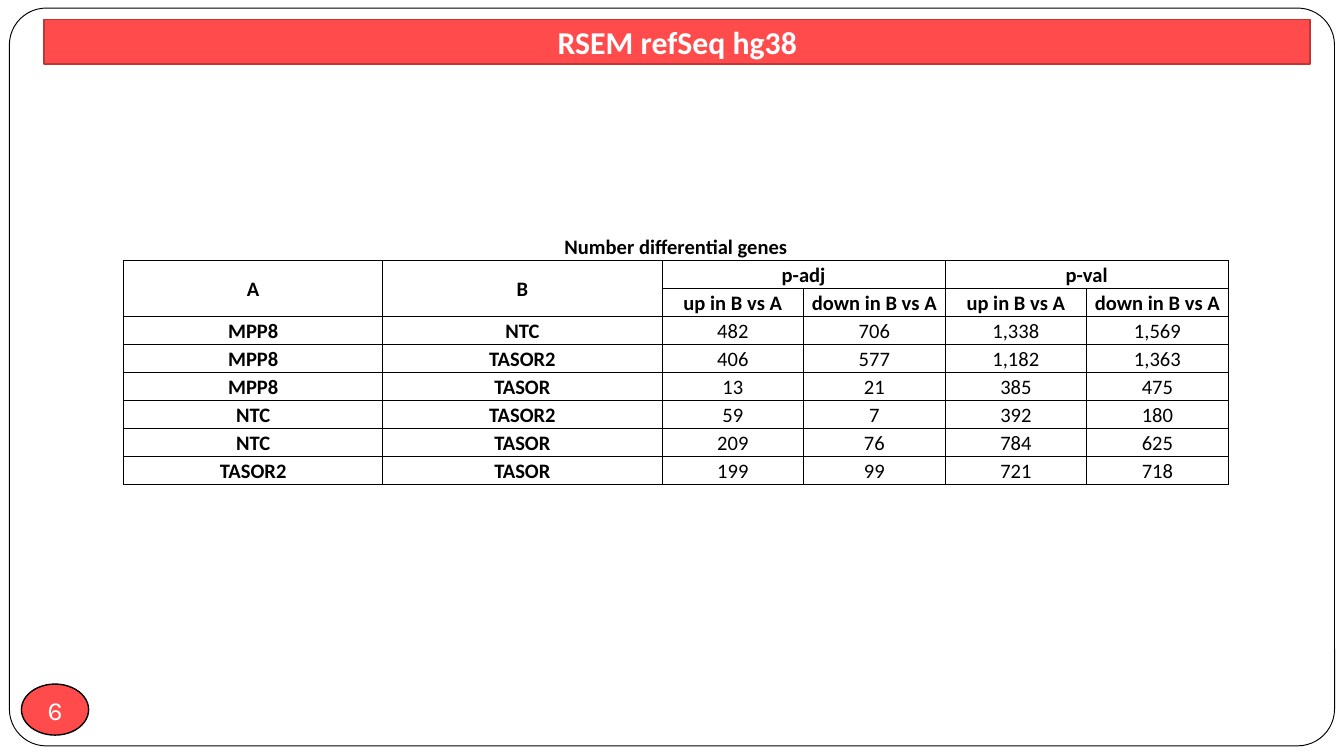
import lxml.etree
import pptx
import pptx.dml.color
import pptx.enum.shapes
import pptx.enum.text
import pptx.oxml.ns
import pptx.util

RED = pptx.dml.color.RGBColor(0xFF, 0x4B, 0x4B)
DARK_RED = pptx.dml.color.RGBColor(0xBD, 0x37, 0x37)
BLACK = pptx.dml.color.RGBColor(0, 0, 0)
WHITE = pptx.dml.color.RGBColor(0xFF, 0xFF, 0xFF)

SHAPE = pptx.enum.shapes.MSO_SHAPE
ANCHOR = pptx.enum.text.MSO_ANCHOR
GRID_COLS = 1000
GRID_ROWS = GRID_COLS * 9 / 16

COL_WIDTHS = [192.8, 207.8] + [105.35] * 4
DIRECTIONS = ["up in B vs A", "down in B vs A"]
ROWS = [
    ["Number differential genes"],
    ["A", "B", "p-adj", "", "p-val", ""],
    ["", ""] + DIRECTIONS * 2,
    ["MPP8", "NTC", "482", "706", "1,338", "1,569"],
    ["MPP8", "TASOR2", "406", "577", "1,182", "1,363"],
    ["MPP8", "TASOR", "13", "21", "385", "475"],
    ["NTC", "TASOR2", "59", "7", "392", "180"],
    ["NTC", "TASOR", "209", "76", "784", "625"],
    ["TASOR2", "TASOR", "199", "99", "721", "718"],
]
SPANS = [(0, 0, 0, 5), (1, 0, 2, 0), (1, 1, 2, 1), (1, 2, 1, 3), (1, 4, 1, 5)]
HEADER_ROWS, LABEL_COLS = 3, 2


def write(tf, text, size=11, font="Calibri", color=BLACK, bold=False):
    """Put one centred, formatted run into a text frame."""
    p = tf.paragraphs[0]
    p.alignment = pptx.enum.text.PP_ALIGN.CENTER
    r = p.add_run()
    r.text = text
    r.font.size = pptx.util.Pt(size)
    r.font.name = font
    r.font.bold = bold
    r.font.color.rgb = color


def add_xml(parent, tag, **attrs):
    """Append a DrawingML child element."""
    return lxml.etree.SubElement(parent, pptx.oxml.ns.qn(tag), attrs)


class Deck:
    """Holds the presentation, its grid and the current slide."""

    def __init__(self):
        """Start a 16:9 presentation with one title-only slide."""
        self.prs = pptx.Presentation()
        self.prs.slide_width = pptx.util.Inches(10)
        self.prs.slide_height = self.prs.slide_width * 9 // 16
        self.s = self.prs.slides.add_slide(self.prs.slide_layouts[5])

    def box(self, col, row, cols, rows):
        """Turn grid columns and rows into slide lengths."""
        x = self.prs.slide_width / GRID_COLS
        y = self.prs.slide_height / GRID_ROWS
        return [round(v) for v in (col * x, row * y, cols * x, rows * y)]

    def paint(self, sp, fill, line, width):
        """Set the fill and outline of a shape."""
        sp.fill.solid()
        sp.fill.fore_color.rgb = fill
        sp.line.color.rgb = line
        sp.line.width = pptx.util.Pt(width)

    def shape(self, kind, box, fill, line, width):
        """Add a preset shape without shadow."""
        sp = self.s.shapes.add_shape(kind, *self.box(*box))
        sp.shadow.inherit = False
        self.paint(sp, fill, line, width)
        return sp

    def frame(self, box):
        """Add the rounded outline around the slide."""
        sp = self.shape(SHAPE.ROUNDED_RECTANGLE, box, WHITE, BLACK, 0.5)
        sp.adjustments[0] = 0.05

    def page_badge(self, text, box):
        """Add the page number in an ellipse."""
        tf = self.shape(SHAPE.OVAL, box, RED, BLACK, 0.75).text_frame
        tf.margin_left = tf.margin_right = tf.margin_top = tf.margin_bottom = 0
        tf.word_wrap = False
        tf.vertical_anchor = ANCHOR.MIDDLE
        write(tf, text, size=14, font="Karla", color=WHITE)

    def title(self, text, box):
        """Shape the title placeholder as a banner in front of the frame."""
        sp = self.s.shapes.title
        sp.left, sp.top, sp.width, sp.height = self.box(*box)
        geom = add_xml(sp.element.spPr, "a:prstGeom", prst="roundRect")
        add_xml(geom, "a:avLst")
        self.paint(sp, RED, DARK_RED, 1)
        sp.element.getparent().append(sp.element)
        tf = sp.text_frame
        tf.auto_size = pptx.enum.text.MSO_AUTO_SIZE.NONE
        tf.vertical_anchor = ANCHOR.MIDDLE
        write(tf, text, size=17, color=WHITE, bold=True)

    def borders(self, cell, sides):
        """Draw the named sides of a cell and clear the others."""
        tc_pr = cell._tc.get_or_add_tcPr()
        for side in "LRTB":
            ln = add_xml(tc_pr, f"a:ln{side}", w=str(pptx.util.Pt(0.5)))
            if side in sides:
                add_xml(add_xml(ln, "a:solidFill"), "a:srgbClr", val=str(BLACK))
            else:
                add_xml(ln, "a:noFill")

    def table(self, box, widths, rows, spans):
        """Add a ruled table with merged headings."""
        left, top, width, height = self.box(*box)
        tbl = self.s.shapes.add_table(
            len(rows), len(widths), left, top, width, height).table
        tbl.first_row = tbl.horz_banding = False
        for column, share in zip(tbl.columns, widths):
            column.width = round(width * share / sum(widths))
        for row in tbl.rows:
            row.height = round(height / len(rows))
        for r0, c0, r1, c1 in spans:
            tbl.cell(r0, c0).merge(tbl.cell(r1, c1))
        for i in range(len(rows)):
            for j in range(len(widths)):
                cell = tbl.cell(i, j)
                self.borders(cell, "LRTB" if i else "B")
                cell.fill.background()
                cell.margin_left = cell.margin_right = pptx.util.Inches(0.01)
                cell.margin_top = pptx.util.Inches(0.01)
                cell.margin_bottom = 0
                tall = cell.is_merge_origin and cell.span_height > 1
                cell.vertical_anchor = ANCHOR.MIDDLE if tall else ANCHOR.BOTTOM
                text = rows[i][j] if j < len(rows[i]) else ""
                if text:
                    write(cell.text_frame, text,
                          bold=i < HEADER_ROWS or j < LABEL_COLS)


def main():
    """Build the slide and save it."""
    deck = Deck()
    deck.frame((7, 6, 986, 549))
    deck.page_badge("6", (16, 509, 50, 38))
    deck.title("RSEM refSeq hg38", (33, 14.5, 942, 33))
    deck.table((92, 173, 822, 187.5), COL_WIDTHS, ROWS, SPANS)
    deck.prs.save("out.pptx")


if __name__ == "__main__":
    main()
